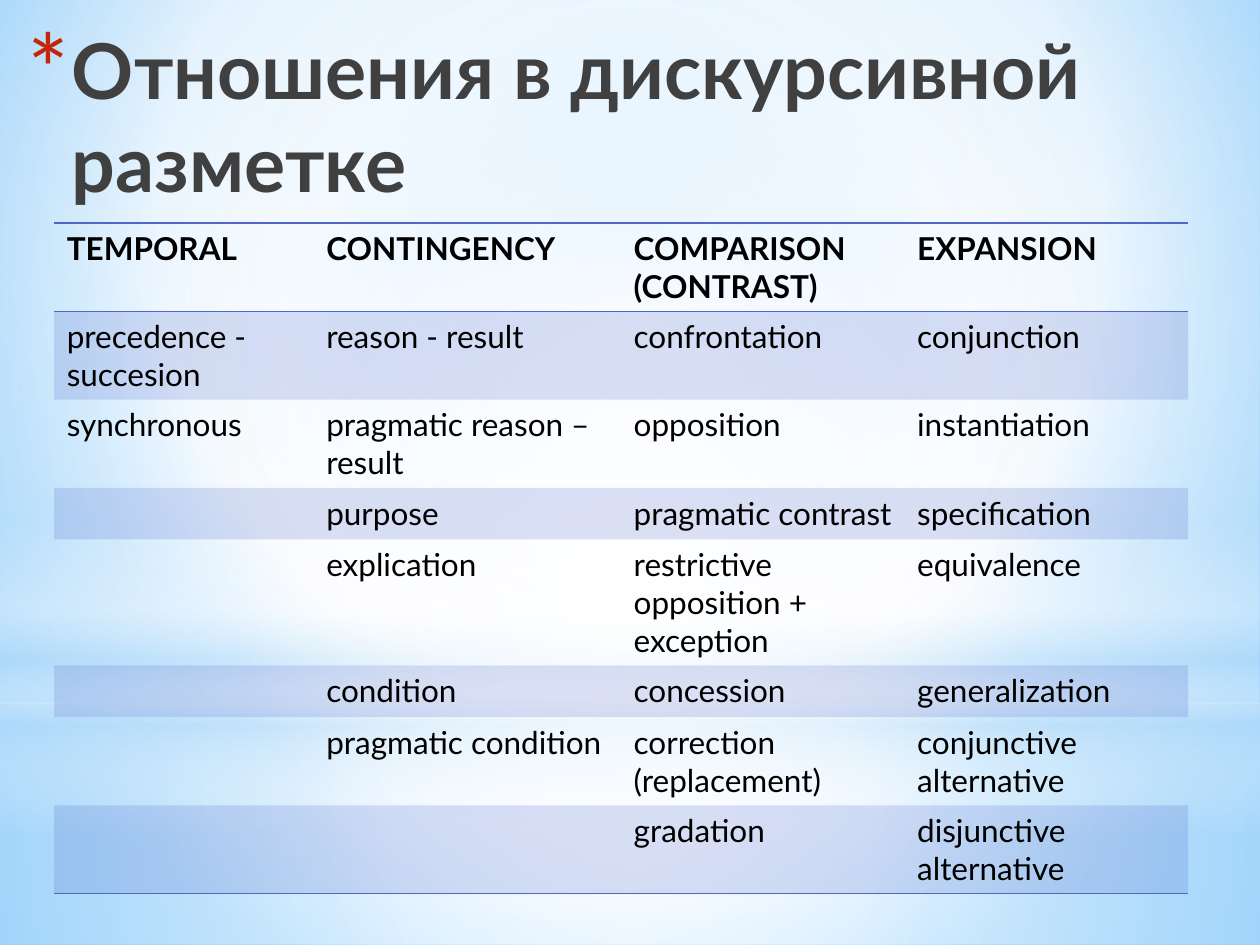
from pptx import Presentation
from pptx.dml.color import RGBColor
from pptx.enum.shapes import MSO_SHAPE as Shape
from pptx.enum.text import MSO_ANCHOR as Anchor, MSO_AUTO_SIZE as AutoSize, PP_ALIGN as Align
from pptx.oxml import parse_xml
from pptx.oxml.ns import nsdecls, qn
from pptx.util import Inches, Pt

FONT = "Lato"
COLORS = {
    "white": "FFFFFF", "sky": "9ED5FF", "azure": "5BB9FF", "pale": "B4DCFA",
    "indigo": "4E67C8", "red": "C3260C", "black": "000000", "gray": "404040", "navy": "212745",
}
PLAIN_TABLE = "{2D5ABB26-0587-4C30-8999-92F81FD0307C}"
CENTER = (50, 50, 50, 50)
COLUMN_WIDTHS = (2.06, 2.44, 2.25, 2.25)
ROW_HEIGHT = 0.41
RELATIONS = (
    ("TEMPORAL", "CONTINGENCY", "COMPARISON (CONTRAST)", "EXPANSION"),
    ("precedence - succesion", "reason - result", "confrontation", "conjunction"),
    ("synchronous", "pragmatic reason – result", "opposition", "instantiation"),
    ("", "purpose", "pragmatic contrast", "specification"),
    ("", "explication", "restrictive opposition + exception", "equivalence"),
    ("", "condition", "concession", "generalization"),
    ("", "pragmatic condition", "correction (replacement)", "conjunctive alternative"),
    ("", "", "gradation", "disjunctive alternative"),
)
GLOWS = (
    (Shape.RECTANGLE, (0, 5.58, 10, 1.92), CENTER,
     ((0, "white", 91), (37, "white", 76), (100, "pale", 79))),
    (Shape.RECTANGLE, (0, 0, 10, 5.58), CENTER,
     ((0, "white", 89), (48, "white", 62), (100, "pale", 79))),
    (Shape.RECTANGLE, (0, 4.12, 10, 2.5), None,
     ((0, "white", 0), (29, "white", 30), (45, "pale", 40),
      (55, "white", 26), (65, "pale", 60), (100, "white", 0))),
    (Shape.OVAL, (0, 1.75, 10, 5.58), CENTER, ((0, "white", 100), (56, "white", 0))),
)


def set_gradient(fill, owner, stops, focus=None):
    """Give a fill its stops, circular around a focus or else vertical."""
    fill.gradient()
    marks = "".join(
        f'<a:gs pos="{place * 1000}"><a:srgbClr val="{COLORS[color]}">'
        f'<a:alpha val="{opacity * 1000}"/></a:srgbClr></a:gs>'
        for place, color, opacity in stops)
    if focus:
        sides = " ".join(f'{side}="{value * 1000}"' for side, value in zip("ltrb", focus))
        course = f'<a:path path="circle"><a:fillToRect {sides}/></a:path>'
    else:
        course = '<a:lin ang="5400000" scaled="0"/>'
    plain = next(owner.iter(qn("a:gradFill")))
    plain.getparent().replace(plain, parse_xml(
        f'<a:gradFill {nsdecls("a")} rotWithShape="1"><a:gsLst>{marks}</a:gsLst>{course}</a:gradFill>'))


def write_text(frame, text, size=18, bold=False, color="black"):
    """Write one left-aligned paragraph and return its run."""
    para = frame.paragraphs[0]
    para.alignment = Align.LEFT
    span = para.add_run()
    span.text = text
    span.font.name, span.font.size, span.font.bold = FONT, Pt(size), bold
    span.font.color.rgb = RGBColor.from_string(COLORS[color])
    return span


def add_backdrop(page):
    """Paint the background and its layers of light."""
    set_gradient(page.background.fill, page._element,
                 ((0, "sky", 100), (60, "white", 100), (100, "azure", 100)), (20, 10, 20, 60))
    for kind, box, focus, stops in GLOWS:
        glow = page.shapes.add_shape(kind, *map(Inches, box))
        glow.shadow.inherit = False
        glow.line.fill.background()
        set_gradient(glow.fill, glow._element, stops, focus)


def add_border(cell, side):
    """Draw a thin line on one side of a cell."""
    cell._tc.get_or_add_tcPr().append(parse_xml(
        f'<a:ln{side} {nsdecls("a")} w="12700"><a:solidFill>'
        f'<a:srgbClr val="{COLORS["indigo"]}"/></a:solidFill></a:ln{side}>'))


def style_cell(cell, row):
    """Set the borders and the banded fill of a cell in the given row."""
    if row == 0:
        add_border(cell, "T")
    if row in (0, len(RELATIONS) - 1):
        add_border(cell, "B")
    if row % 2:
        cell.fill.solid()
        cell.fill.fore_color.rgb = RGBColor.from_string(COLORS["indigo"])
        tint = cell._tc.tcPr.find(qn("a:solidFill"))[0]
        tint.append(parse_xml(f'<a:alpha {nsdecls("a")} val="20000"/>'))
    else:
        cell.fill.background()


def add_relations(page, left, top):
    """Place the table of discourse relations."""
    table = page.shapes.add_table(
        len(RELATIONS), len(COLUMN_WIDTHS), Inches(left), Inches(top),
        Inches(sum(COLUMN_WIDTHS)), Inches(ROW_HEIGHT * len(RELATIONS))).table
    table._tbl.tblPr.find(qn("a:tableStyleId")).text = PLAIN_TABLE
    for column, width in zip(table.columns, COLUMN_WIDTHS):
        column.width = Inches(width)
    for index, words in enumerate(RELATIONS):
        table.rows[index].height = Inches(ROW_HEIGHT)
        for column, text in enumerate(words):
            cell = table.cell(index, column)
            style_cell(cell, index)
            if text:
                write_text(cell.text_frame, text, bold=index == 0)


def add_title(page, left, top, width, height):
    """Place the title in front, with its red asterisk bullet."""
    title = page.shapes.title
    page.shapes._spTree.append(title._element)
    title.left, title.top, title.width, title.height = map(Inches, (left, top, width, height))
    frame = title.text_frame
    frame.word_wrap, frame.auto_size = True, AutoSize.NONE
    frame.vertical_anchor = Anchor.TOP
    span = write_text(frame, "Отношения в дискурсивной разметке", size=44, bold=True, color="gray")
    set_gradient(span.font.fill, span._r,
                 ((0, "black", 100), (40, "gray", 100), (100, "navy", 65)))
    layout = frame.paragraphs[0]._p.get_or_add_pPr()
    layout.set("marL", str(Inches(0.35)))
    layout.set("indent", str(Inches(-0.35)))
    for bullet in (f'buClr {nsdecls("a")}><a:srgbClr val="{COLORS["red"]}"/></a:buClr',
                   f'buSzPct {nsdecls("a")} val="128000"/',
                   f'buFont {nsdecls("a")} typeface="{FONT}"/',
                   f'buChar {nsdecls("a")} char="*"/'):
        layout.append(parse_xml(f"<a:{bullet}>"))


def main():
    """Build the slide and save the deck."""
    deck = Presentation()
    deck.slide_width, deck.slide_height = Inches(10), Inches(7.5)
    page = deck.slides.add_slide(deck.slide_layouts[5])
    add_backdrop(page)
    add_relations(page, 0.43, 1.77)
    add_title(page, 0.12, 0.13, 9.69, 1.25)
    deck.save("out.pptx")


if __name__ == "__main__":
    main()
